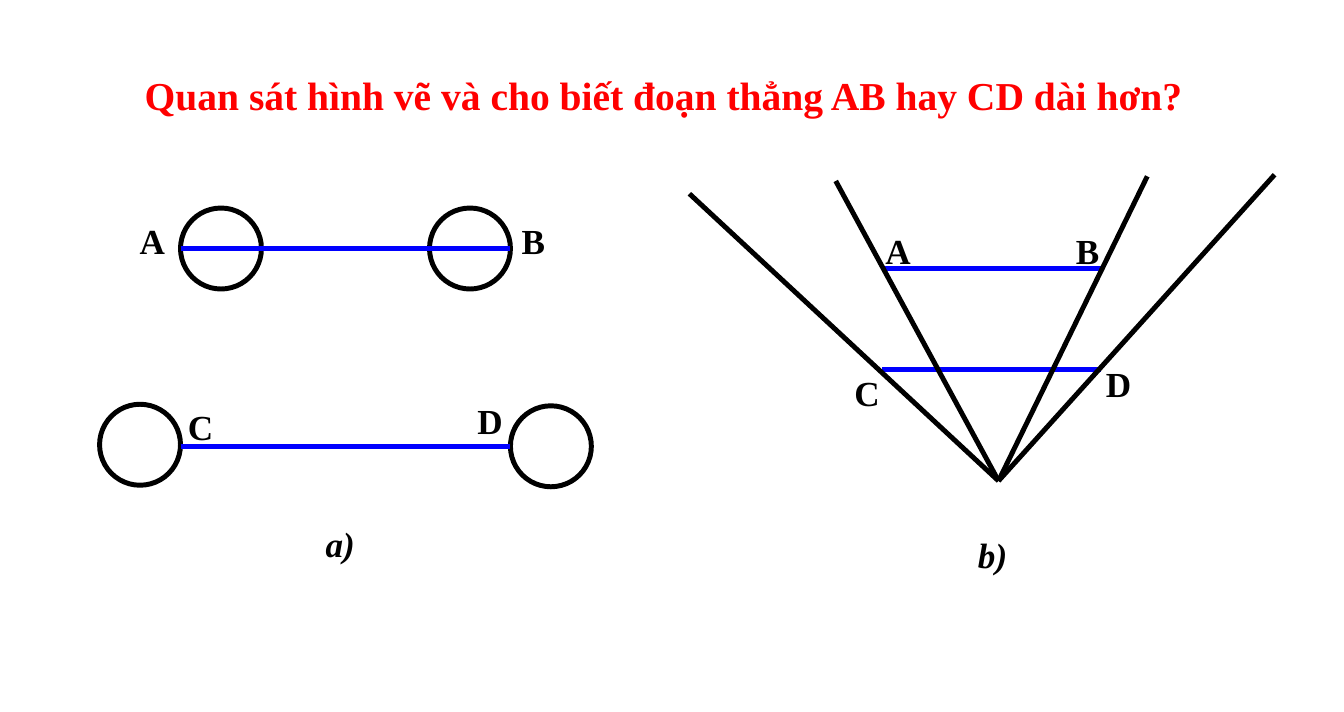
import pptx
import pptx.dml.color
import pptx.enum.shapes
import pptx.enum.text
import pptx.util
from lxml import etree
from pptx.util import Cm

BLACK, BLUE, RED = "000000", "0000FF", "FF0000"
CIRCLE = 2.6
LABEL_WIDTH, LABEL_HEIGHT = 1.8, 1.63


def rgb(value):
    return pptx.dml.color.RGBColor.from_string(value)


def set_stroke(line, color):
    line.color.rgb = rgb(color)
    line.width = pptx.util.Pt(4.5)


def add_text(shapes, wording, left, top, width, height, size=32, color=BLACK, italic=False):
    frame = shapes.add_textbox(Cm(left), Cm(top), Cm(width), Cm(height)).text_frame
    frame.word_wrap = True
    paragraph = frame.paragraphs[0]
    run = paragraph.add_run()
    run.text = wording
    run.font.color.rgb = rgb(color)
    formats = {"name": "Times New Roman", "size": pptx.util.Pt(size),
               "bold": True, "italic": italic}
    for attribute, value in formats.items():
        setattr(run.font, attribute, value)
    return paragraph


def add_segment(shapes, start, end, color):
    segment = shapes.add_connector(
        pptx.enum.shapes.MSO_CONNECTOR.STRAIGHT, *map(Cm, (*start, *end)))
    set_stroke(segment.line, color)
    etree.SubElement(segment._element.spPr, pptx.oxml.ns.qn("a:effectLst"))


def add_circle(shapes, left, top):
    circle = shapes.add_shape(
        pptx.enum.shapes.MSO_SHAPE.OVAL, Cm(left), Cm(top), Cm(CIRCLE), Cm(CIRCLE))
    circle.shadow.inherit = False
    circle.fill.background()
    set_stroke(circle.line, BLACK)


def add_labels(shapes, left, top, points, caption):
    """Place point letters and the italic caption, offset from the panel corner."""
    for wording, (x, y) in {**points, **caption}.items():
        add_text(shapes, wording, left + x, top + y, LABEL_WIDTH, LABEL_HEIGHT,
                 italic=wording in caption)


def add_question(slide, left, top, width, height):
    question = add_text(
        slide.shapes, "Quan sát hình vẽ và cho biết đoạn thẳng AB hay CD dài hơn?",
        left, top, width, height, size=36, color=RED)
    question.alignment = pptx.enum.text.PP_ALIGN.JUSTIFY
    question.line_spacing = 1.15


def add_circles_panel(slide, left, top, width):
    shapes = slide.shapes.add_group_shape().shapes
    segment_start, segment_end = left + CIRCLE, left + width - CIRCLE
    for x, y in ((segment_start, 0), (segment_end - CIRCLE, 0),
                 (left, 6.3), (segment_end, 6.35)):
        add_circle(shapes, x, top + y)
    for y in (CIRCLE / 2, 7.65):
        add_segment(shapes, (segment_start, top + y), (segment_end, top + y), BLUE)
    add_labels(shapes, left, top,
               {"A": (1.04, 0.25), "B": (13.31, 0.25),
                "C": (2.59, 6.2), "D": (11.89, 6.02)},
               {"a)": (7.01, 9.98)})


def add_rays_panel(slide, left, top, width):
    shapes = slide.shapes.add_group_shape().shapes
    for y in (3.02, 6.25):
        add_segment(shapes, (left + 6.2, top + y), (left + 13.21, top + y), BLUE)
    apex = (left + 9.93, top + 9.83)
    for x, y in ((4.7, 0.2), (14.71, 0.05), (0, 0.61), (width, 0)):
        add_segment(shapes, (left + x, top + y), apex, BLACK)
    add_labels(shapes, left, top,
               {"A": (6.05, 1.63), "B": (12.17, 1.63),
                "C": (5.05, 6.2), "D": (13.13, 5.89)},
               {"b)": (9.02, 11.4)})


def main():
    presentation = pptx.Presentation()
    presentation.slide_width, presentation.slide_height = Cm(43.18), Cm(22.86)
    slide = presentation.slides.add_slide(presentation.slide_layouts[6])
    add_question(slide, 4.4, 1.92, 35.25, 1.9)
    add_circles_panel(slide, 3.2, 6.68, 15.8)
    add_rays_panel(slide, 22.15, 5.61, 18.8)
    presentation.save("out.pptx")


if __name__ == "__main__":
    main()
